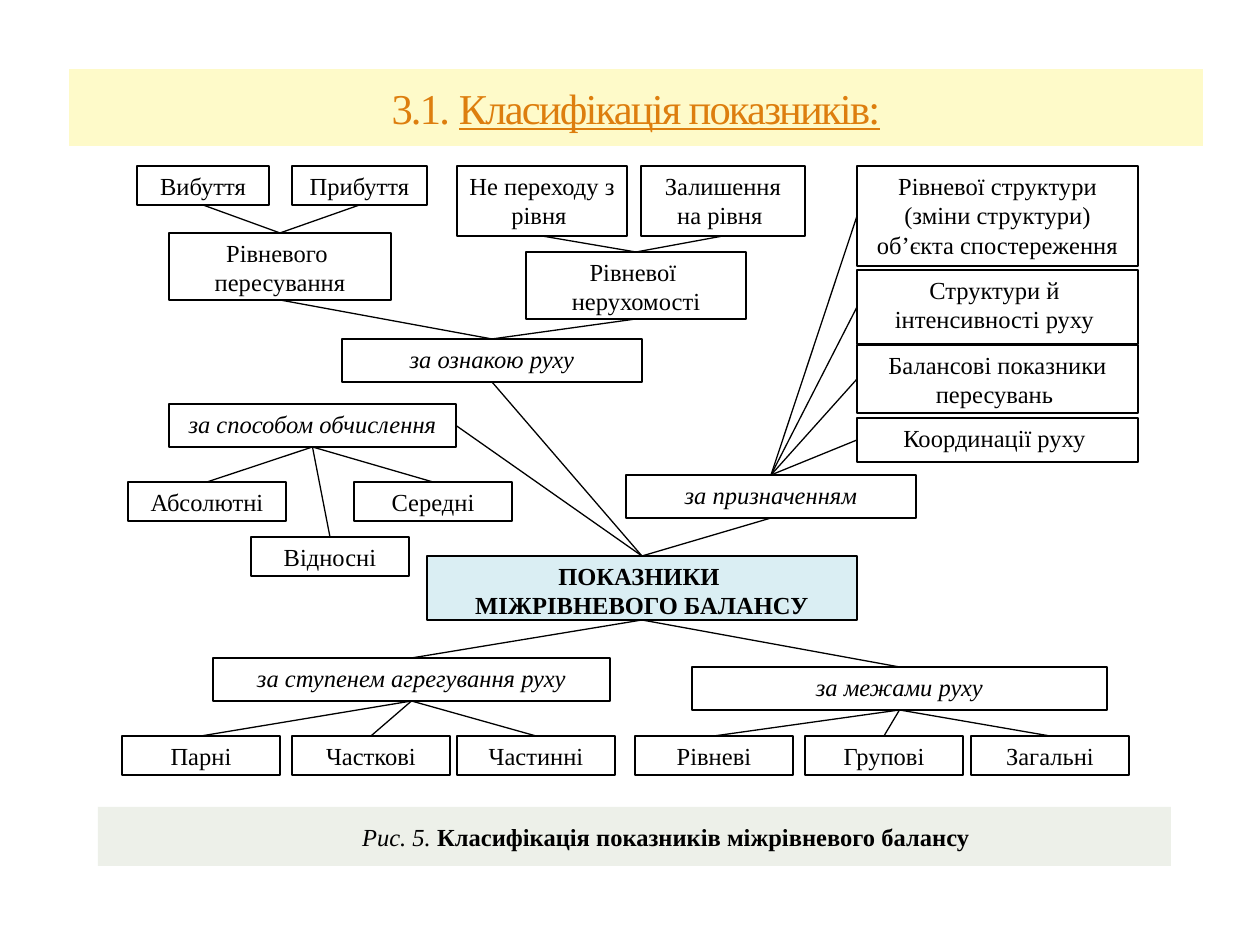
from lxml import etree
from pptx import Presentation
from pptx.dml.color import RGBColor
from pptx.enum.shapes import MSO_CONNECTOR, MSO_SHAPE
from pptx.enum.text import MSO_ANCHOR, MSO_AUTO_SIZE, PP_ALIGN
from pptx.oxml.ns import qn
from pptx.util import Pt

RECT = MSO_SHAPE.RECTANGLE
LINE = MSO_CONNECTOR.STRAIGHT
CENTER = PP_ALIGN.CENTER
TOP, MIDDLE = MSO_ANCHOR.TOP, MSO_ANCHOR.MIDDLE
NO_FIT = MSO_AUTO_SIZE.NONE
UP, LEFT, DOWN, RIGHT = range(4)
FONT = "Times New Roman"

# kind: fill, line width, bold, italic
KINDS = {
    "root": ("DAEEF3", 1.25, True, False),
    "topic": ("FFFFFF", 0.75, False, True),
    "leaf": ("FFFFFF", 1, False, False),
}

# name: kind, left, top, width, height, text
BOXES = {
    "root": ("root", 427, 556, 430, 64, "ПОКАЗНИКИ \nМІЖРІВНЕВОГО БАЛАНСУ"),
    "motion": ("topic", 342, 339, 300, 43, "за ознакою руху"),
    "method": ("topic", 169, 404, 287, 43, "за способом обчислення"),
    "purpose": ("topic", 626, 475, 290, 43, "за призначенням"),
    "degree": ("topic", 213, 658, 397, 43, "за ступенем агрегування руху"),
    "limits": ("topic", 692, 667, 415, 43, "за межами руху"),
    "moving": ("leaf", 169, 233, 222, 67, "Рівневого \nпересування"),
    "still": ("leaf", 526, 252, 220, 67, "Рівневої \nнерухомості"),
    "leave": ("leaf", 137, 166, 132, 39, "Вибуття"),
    "arrive": ("leaf", 292, 166, 135, 39, "Прибуття"),
    "stay": ("leaf", 457, 166, 170, 70, "Не переходу з рівня "),
    "remain": ("leaf", 641, 166, 164, 70, "Залишення на рівня "),
    "form": ("leaf", 857, 166, 281, 100,
             "Рівневої структури (зміни структури) об’єкта спостереження"),
    "pace": ("leaf", 857, 270, 281, 74, "Структури й \nінтенсивності руху "),
    "balance": ("leaf", 857, 345, 281, 68, "Балансові показники пересувань "),
    "order": ("leaf", 857, 418, 281, 44, "Координації руху "),
}

# Equal small boxes: name, left, top, text
SMALL = [
    ("total", 128, 482, "Абсолютні"),
    ("ratio", 251, 537, "Відносні"),
    ("mean", 354, 482, "Середні"),
    ("pair", 122, 736, "Парні"),
    ("partial", 292, 736, "Часткові"),
    ("part", 457, 736, "Частинні"),
    ("level", 635, 736, "Рівневі"),
    ("group", 805, 736, "Групові"),
    ("whole", 971, 736, "Загальні"),
]

# parent, its side, children, their side
LINKS = [
    ("root", UP, ["motion", "purpose"], DOWN),
    ("root", UP, ["method"], RIGHT),
    ("root", DOWN, ["degree", "limits"], UP),
    ("motion", UP, ["moving", "still"], DOWN),
    ("moving", UP, ["leave", "arrive"], DOWN),
    ("still", UP, ["stay", "remain"], DOWN),
    ("purpose", UP, ["form", "pace", "balance", "order"], LEFT),
    ("method", DOWN, ["total", "ratio", "mean"], UP),
    ("degree", DOWN, ["pair", "partial", "part"], UP),
    ("limits", DOWN, ["level", "group", "whole"], UP),
]


def px(n):
    return round(n * 914400 / 126)


def color(code):
    return RGBColor.from_string(code)


def paint(shape, fill):
    shape.fill.solid()
    shape.fill.fore_color.rgb = color(fill)


def style(run, size, code="000000", bold=False, italic=False):
    font = run.font
    font.name, font.size = FONT, Pt(size)
    font.bold, font.italic = bold, italic
    font.color.rgb = color(code)


def set_frame(shape, anchor, side=0, edge=0):
    frame = shape.text_frame
    frame.word_wrap = True
    frame.auto_size = NO_FIT
    frame.vertical_anchor = anchor
    frame.margin_left = frame.margin_right = px(side)
    frame.margin_top = frame.margin_bottom = px(edge)
    return frame


def add_rect(slide, x, y, w, h, fill):
    shape = slide.shapes.add_shape(RECT, px(x), px(y), px(w), px(h))
    shape.shadow.inherit = False
    paint(shape, fill)
    return shape


def add_box(slide, kind, x, y, w, h, text):
    fill, width, bold, italic = KINDS[kind]
    shape = add_rect(slide, x, y, w, h, fill)
    shape.line.color.rgb = color("000000")
    shape.line.width = Pt(width)
    frame = set_frame(shape, TOP, 11, 5)
    frame.text = text
    for para in frame.paragraphs:
        para.alignment = CENTER
        for run in para.runs:
            style(run, 14, bold=bold, italic=italic)
    return shape


def add_link(slide, start, side, end, other):
    link = slide.shapes.add_connector(LINE, 0, 0, 0, 0)
    link.begin_connect(start, side)
    link.end_connect(end, other)
    link.line.color.rgb = color("000000")
    link.line.width = Pt(0.75)
    etree.SubElement(link._element.spPr, qn("a:effectLst"))


def add_title(slide):
    title = slide.shapes.title
    title.left, title.top = px(69), px(69)
    title.width, title.height = px(1134), px(77)
    paint(title, "FEFAC9")
    para = set_frame(title, MIDDLE).paragraphs[0]
    para.alignment = CENTER
    for text, under in (("3.1. ", False), ("Класифікація показників:", True)):
        run = para.add_run()
        run.text = text
        style(run, 24.3, "DD7E0E")
        run.font.underline = under
        run._r.get_or_add_rPr().set("spc", "-100")


def add_caption(slide):
    shape = add_rect(slide, 98, 807, 1073, 59, "EDF0E9")
    shape.line.fill.background()
    para = set_frame(shape, MIDDLE).paragraphs[0]
    para.alignment = CENTER
    para._p.get_or_add_pPr().set("indent", str(px(63)))
    parts = (("Рис. 5. ", False),
             ("Класифікація показників міжрівневого балансу", True))
    for text, bold in parts:
        run = para.add_run()
        run.text = text
        style(run, 14, bold=bold, italic=not bold)


def main():
    prs = Presentation()
    prs.slide_width, prs.slide_height = px(1260), px(945)
    slide = prs.slides.add_slide(prs.slide_layouts[5])

    # Heading and caption
    add_title(slide)
    add_caption(slide)

    # Boxes of the scheme
    nodes = {name: add_box(slide, *box) for name, box in BOXES.items()}
    for name, x, y, text in SMALL:
        nodes[name] = add_box(slide, "leaf", x, y, 158, 39, text)

    # Lines between the boxes
    for parent, side, kids, other in LINKS:
        for kid in kids:
            add_link(slide, nodes[parent], side, nodes[kid], other)

    prs.save("out.pptx")


if __name__ == "__main__":
    main()
